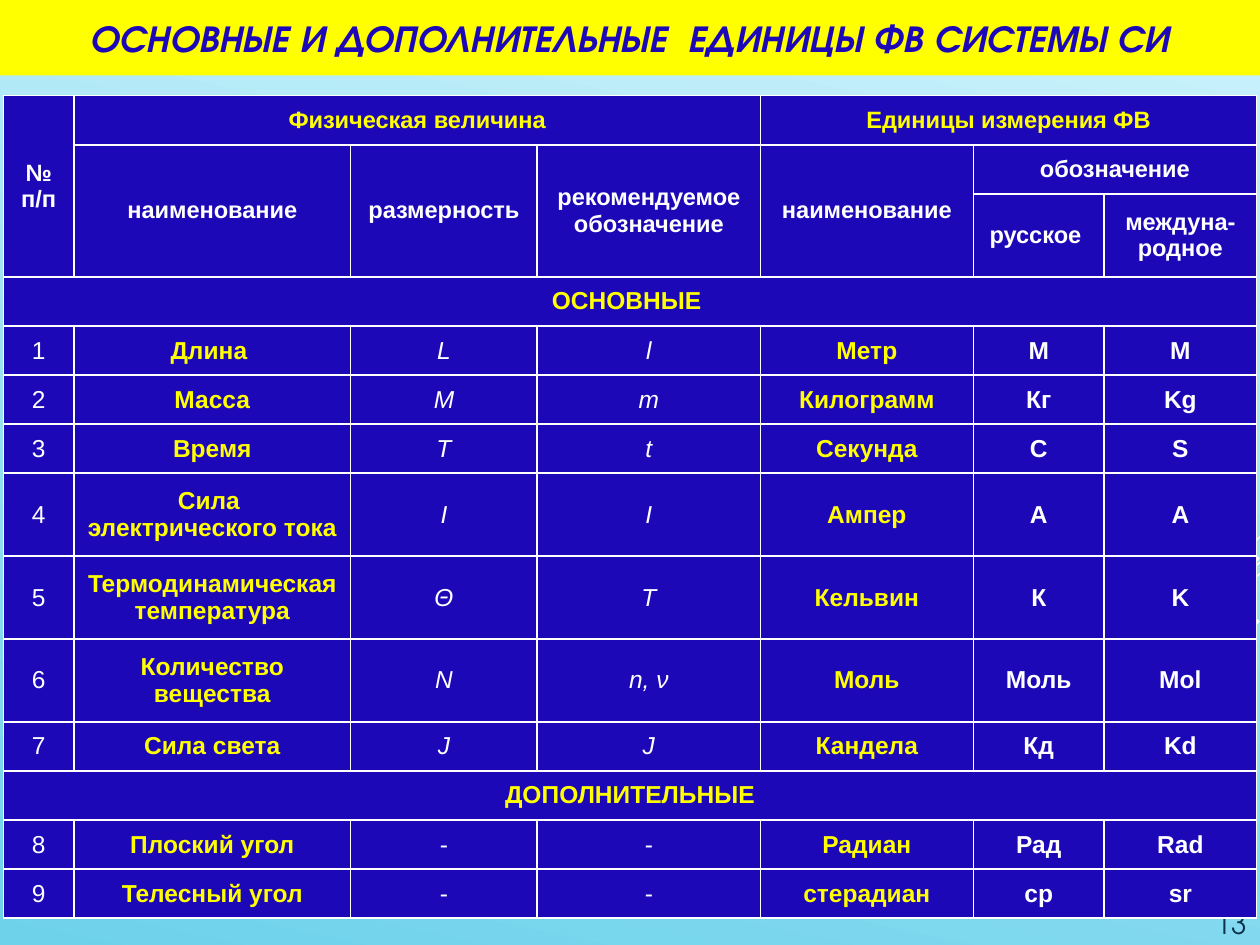
import dataclasses
import itertools

import lxml.etree
import pptx
import pptx.dml.color
import pptx.enum.dml
import pptx.enum.shapes
import pptx.enum.text
import pptx.oxml
import pptx.oxml.ns
import pptx.util

Cm = pptx.util.Cm
Pt = pptx.util.Pt
ALIGN = pptx.enum.text.PP_ALIGN
ANCHOR = pptx.enum.text.MSO_ANCHOR

HUES = {
    "blue": "1D08B8",
    "yellow": "FFFF00",
    "white": "FFFFFF",
    "navy": "0A304A",
    "pale": "C8F1FB",
    "sky": "6ED2EB",
}


@dataclasses.dataclass(frozen=True)
class Face:
    hue: str
    size: float = 14
    bold: bool = False
    slant: bool = False
    font: str = "Arial"


@dataclasses.dataclass(frozen=True)
class Head:
    row: int
    col: int
    down: int
    wide: int
    text: str
    face: Face


@dataclasses.dataclass(frozen=True)
class Ray:
    left: float
    top: float
    end: float
    base: float
    width: float


TITLE = Face("blue", 21.6, True, True, "TeX Gyre Adventor")
PAGE = Face("navy", 16, font="TeX Gyre Adventor")
GROUP = Face("yellow", 13.5, True)
LABEL = Face("white", 13.5, True)
NAME = Face("yellow", bold=True)
UNIT = Face("white", bold=True)
PLAIN = Face("white")
SIGN = Face("white", slant=True)

RAYS = [
    Ray(25.4, 10.82, 23.29, 12.93, 0.75),
    Ray(25.4, 11.33, 18.54, 18.21, 0.75),
    Ray(25.4, 11.56, 21.03, 15.93, 0.75),
    Ray(25.37, 11.23, 21.39, 15.21, 2.25),
    Ray(25.37, 12.5, 22.48, 15.39, 2.25),
]

HEADS = [
    Head(0, 0, 3, 1, "№\nп/п", LABEL),
    Head(0, 1, 1, 3, "Физическая величина", GROUP),
    Head(0, 4, 1, 3, "Единицы измерения ФВ", GROUP),
    Head(1, 1, 2, 1, "наименование", LABEL),
    Head(1, 2, 2, 1, "размерность", LABEL),
    Head(1, 3, 2, 1, "рекомендуемое обозначение", LABEL),
    Head(1, 4, 2, 1, "наименование", LABEL),
    Head(1, 5, 1, 2, "обозначение", LABEL),
    Head(2, 5, 1, 1, "русское ", LABEL),
    Head(2, 6, 1, 1, "междуна-родное", LABEL),
    Head(3, 0, 1, 7, "ОСНОВНЫЕ ", NAME),
    Head(11, 0, 1, 7, "ДОПОЛНИТЕЛЬНЫЕ", NAME),
]

UNITS = [
    ("Длина ", "L", "l", "Метр", "М", "M"),
    ("Масса", "M", "m", "Килограмм", "Кг", "Kg"),
    ("Время", "T", "t", "Секунда", "С", "S"),
    ("Сила \nэлектрического тока", "I", "I", "Ампер", "А", "A"),
    ("Термодинамическая температура", "Θ", "T", "Кельвин", "К", "K"),
    ("Количество вещества", "N", "n, ν", "Моль", "Моль", "Mol"),
    ("Сила света", "J", "J", "Кандела", "Кд", "Kd"),
    ("Плоский угол", "-", "-", "Радиан", "Рад", "Rad"),
    ("Телесный угол", "-", "-", "стерадиан", "ср", "sr"),
]
MAIN = 7
FIRST = 4
COLS = [1.42, 5.58, 3.76, 4.5, 4.29, 2.64, 3.07]
ROWS = 14
TALL = {2, 7, 8, 9}


def tint(name: str) -> pptx.dml.color.RGBColor:
    return pptx.dml.color.RGBColor.from_string(HUES[name])


def write(frame, text: str, face: Face, align=ALIGN.CENTER) -> None:
    for spot, line in enumerate(text.split("\n")):
        para = frame.add_paragraph() if spot else frame.paragraphs[0]
        para.alignment = align
        run = para.add_run()
        run.text = line
        run.font.name = face.font
        run.font.size = Pt(face.size)
        run.font.bold = face.bold
        run.font.italic = face.slant
        run.font.color.rgb = tint(face.hue)


def paint(slide) -> None:
    fill = slide.background.fill
    fill.gradient()
    fill.gradient_angle = 258
    for stop, (hue, place) in zip(fill.gradient_stops, [("pale", 0.04), ("sky", 1)]):
        stop.color.rgb = tint(hue)
        stop.position = place


def draw_ray(slide, ray: Ray) -> None:
    line = slide.shapes.add_connector(
        pptx.enum.shapes.MSO_CONNECTOR.STRAIGHT,
        Cm(ray.left), Cm(ray.top), Cm(ray.end), Cm(ray.base),
    )
    line.line.color.rgb = tint("white")
    line.line.width = Pt(ray.width)
    lxml.etree.SubElement(line._element.spPr, pptx.oxml.ns.qn("a:effectLst"))


def draw_page(slide) -> None:
    box = slide.shapes.add_textbox(Cm(22.99), Cm(17.22), Cm(2.39), Cm(1.85))
    box.text_frame.word_wrap = True
    box.text_frame.vertical_anchor = ANCHOR.BOTTOM
    write(box.text_frame, "13", PAGE, ALIGN.RIGHT)


def draw_title(slide) -> None:
    bar = slide.shapes.add_shape(
        pptx.enum.shapes.MSO_SHAPE.RECTANGLE, 0, 0, Cm(25.4), Cm(1.52)
    )
    bar.shadow.inherit = False
    bar.fill.solid()
    bar.fill.fore_color.rgb = tint("yellow")
    bar.line.fill.background()
    bar.text_frame.word_wrap = True
    bar.text_frame.vertical_anchor = ANCHOR.MIDDLE
    write(bar.text_frame, "ОСНОВНЫЕ И ДОПОЛНИТЕЛЬНЫЕ  ЕДИНИЦЫ ФВ СИСТЕМЫ СИ", TITLE)


def dress(cell) -> None:
    cell.vertical_anchor = ANCHOR.MIDDLE
    cell.margin_left = cell.margin_right = Cm(0.24)
    cell.margin_top = cell.margin_bottom = Cm(0.13)
    cell.fill.solid()
    cell.fill.fore_color.rgb = tint("blue")
    props = cell._tc.get_or_add_tcPr()
    for spot, side in enumerate(("lnL", "lnR", "lnT", "lnB")):
        edge = pptx.oxml.parse_xml(
            f'<a:{side} {pptx.oxml.ns.nsdecls("a")} w="{Pt(1)}"><a:solidFill>'
            f'<a:srgbClr val="{HUES["white"]}"/></a:solidFill></a:{side}>'
        )
        props.insert(spot, edge)


def draw_table(slide) -> None:
    highs = [1.67 if row in TALL else 0.99 for row in range(ROWS)]
    grid = slide.shapes.add_table(
        ROWS, len(COLS), Cm(0.07), Cm(1.93), Cm(sum(COLS)), Cm(sum(highs))
    ).table
    for col, wide in zip(grid.columns, COLS):
        col.width = Cm(wide)
    for row, high in zip(grid.rows, highs):
        row.height = Cm(high)
    for row, col in itertools.product(range(ROWS), range(len(COLS))):
        dress(grid.cell(row, col))
    for head in HEADS:
        cell = grid.cell(head.row, head.col)
        if head.down * head.wide > 1:
            cell.merge(grid.cell(head.row + head.down - 1, head.col + head.wide - 1))
        write(cell.text_frame, head.text, head.face)
    for count, unit in enumerate(UNITS):
        row = FIRST + count + (count >= MAIN)
        sign = SIGN if count < MAIN else PLAIN
        faces = (PLAIN, NAME, sign, sign, NAME, UNIT, UNIT)
        for col, (text, face) in enumerate(zip((str(count + 1), *unit), faces)):
            write(grid.cell(row, col).text_frame, text, face)


def main() -> None:
    deck = pptx.Presentation()
    deck.slide_width, deck.slide_height = Cm(25.4), Cm(19.05)
    slide = deck.slides.add_slide(deck.slide_layouts[6])
    paint(slide)
    for ray in RAYS:
        draw_ray(slide, ray)
    draw_page(slide)
    draw_title(slide)
    draw_table(slide)
    deck.save("out.pptx")


if __name__ == "__main__":
    main()
